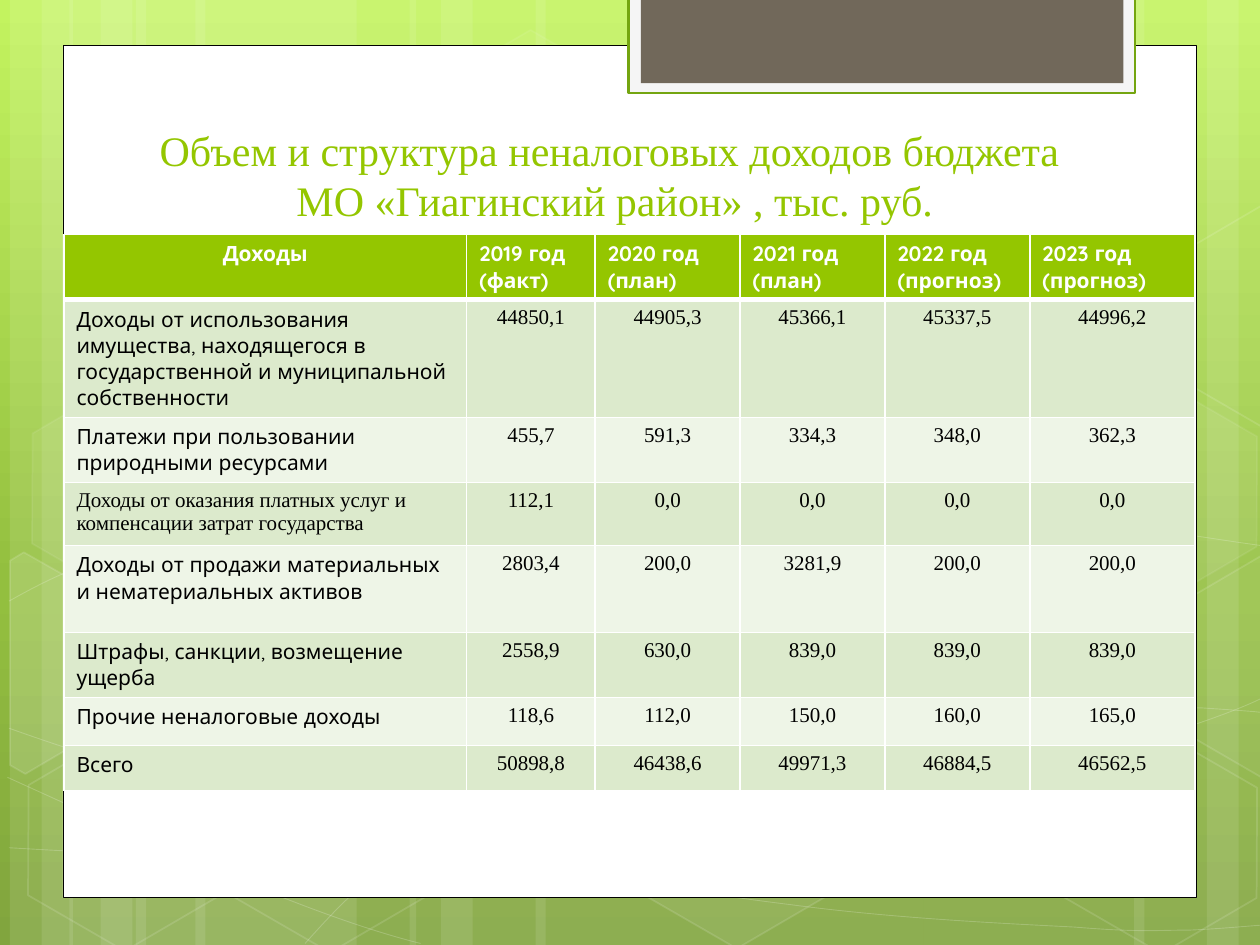
import copy
import math

import pptx
import pptx.dml.color
import pptx.enum.shapes
import pptx.enum.text
import pptx.oxml
import pptx.oxml.ns
import pptx.util

Cm, Pt = pptx.util.Cm, pptx.util.Pt
RGB = pptx.dml.color.RGBColor.from_string
KIND = pptx.enum.shapes.MSO_SHAPE
ALIGN = pptx.enum.text.PP_ALIGN
qn = pptx.oxml.ns.qn
SPACE = pptx.oxml.ns.nsdecls("a")

HUES = {
    "white": "FFFFFF", "black": "000000", "lime": "94C600",
    "sky": "C3F35F", "mid": "93BF3F", "low": "81A53E",
    "frame": "F5F5F5", "edge": "74A510", "tab": "71685A",
    "odd": "DCEACC", "even": "EEF5E7",
}
SERIF, SANS = "Times New Roman", "Quicksand"


def paint(shape, fill=None, line=None, width=1, fade=100, dim=100):
    """Set fill and line; fade and dim are their opacities in percent."""
    shape.shadow.inherit = False
    for hue, part, alpha in ((fill, shape.fill, fade), (line, shape.line.fill, dim)):
        if not hue:
            part.background()
            continue
        part.solid()
        part.fore_color.rgb = RGB(HUES[hue])
        if alpha < 100:
            holder = shape.element.spPr
            if part is not shape.fill:
                holder = holder.find(qn("a:ln"))
            clr = holder.find(qn("a:solidFill")).find(qn("a:srgbClr"))
            clr.append(pptx.oxml.parse_xml(f'<a:alpha {SPACE} val="{alpha * 1000}"/>'))
    if line:
        shape.line.width = Pt(width)


def write(frame, text, font=SANS, size=12, hue="black", bold=False, align=ALIGN.LEFT):
    frame.word_wrap = True
    frame.text = text
    for para in frame.paragraphs:
        para.alignment = align
        for run in para.runs:
            run.font.name = font
            run.font.size = Pt(size)
            run.font.bold = bold
            run.font.color.rgb = RGB(HUES[hue])


deck = pptx.Presentation()
deck.slide_width, deck.slide_height = Cm(25.4), Cm(19.05)
slide = deck.slides.add_slide(deck.slide_layouts[5])
shapes = slide.shapes

# Background gradient
back = slide.background.fill
back.gradient()
back.gradient_angle = 270
last = list(slide.element.iter(qn("a:gs")))[-1]
last.addnext(copy.deepcopy(last))
for stop, (hue, spot) in zip(back.gradient_stops,
                             (("sky", 0), ("mid", 0.62), ("low", 1))):
    stop.color.rgb = RGB(HUES[hue])
    stop.position = spot

# Vertical light bands
for left, width, turn in (
        (2.74, 4.45, 0), (0.2, 1.27, 0), (0.84, 2.11, 0), (3.94, 4.45, 0),
        (1.4, 1.27, 0), (2.03, 2.11, 0), (18.62, 4.45, 180), (24.33, 1.27, 180),
        (22.86, 2.11, 180), (10.8, 7.82, 0), (8.26, 1.27, 0), (8.89, 2.11, 0)):
    band = shapes.add_shape(KIND.RECTANGLE, Cm(left), 0, Cm(width), deck.slide_height)
    band.rotation = turn
    paint(band, "white", fade=10)

# Thin curves: a start point, then three Bezier points for each span;
# flat is the index of a point reached by a straight line
curves = (
    (None, ((0.18, 17.09), (1.55, 17.17), (2.92, 17.25), (4.83, 17.22), (6.73, 17.2),
            (9.09, 17.15), (11.63, 16.89), (14.17, 16.64), (17.78, 16.15),
            (20.12, 15.67), (22.43, 15.19), (24.82, 14.43), (25.58, 14))),
    (None, ((0.18, 12.12), (0.91, 11.71), (1.65, 11.33), (3.07, 10.95), (4.52, 10.57),
            (6.58, 10.01), (8.81, 9.83), (11.07, 9.65), (13.82, 9.63), (16.61, 9.83),
            (19.41, 10.03), (24.05, 10.82), (25.58, 11.02))),
    (None, ((0.15, 15.67), (3.23, 17.07), (6.27, 18.47), (8.48, 19.02))),
    (None, ((0.18, 14.68), (0.97, 14.96), (1.78, 15.24), (3.25, 15.65), (4.72, 16.03),
            (6.93, 16.66), (9.07, 17.09), (11.18, 17.53), (13.84, 17.98),
            (15.95, 18.24), (18.06, 18.52), (20.32, 18.62), (21.67, 18.69),
            (22.99, 18.8), (23.34, 18.75), (24, 18.75), (24.66, 18.72),
            (25.12, 18.67), (25.58, 18.64))),
    (22, ((6.15, 19.02), (6.6, 18.52), (7.06, 18.01), (7.67, 17.55), (8.28, 17.09),
          (9.14, 16.59), (9.86, 16.23), (10.57, 15.88), (11, 15.72), (11.94, 15.47),
          (12.87, 15.22), (14.55, 14.86), (15.44, 14.68), (16.36, 14.5), (16.48, 14.45),
          (17.27, 14.45), (18.06, 14.38), (19.3, 14.3), (20.17, 14.27), (21.06, 14.25),
          (22.5, 14.27), (22.5, 14.27), (24.21, 14.27), (24.66, 14.3), (25.1, 14.33),
          (25.32, 14.35), (25.55, 14.38), (25.48, 14.35), (25.55, 14.38))),
)
for flat, knots in curves:
    dots = [(Cm(x), Cm(y)) for x, y in knots]
    pen = shapes.build_freeform(*dots[0])
    pen.add_line_segments(dots[1:], close=False)
    curve = pen.convert_to_shape()
    span = []
    for at, leg in enumerate(list(curve.element.iter(qn("a:lnTo"))), 1):
        if at == flat:
            continue
        span.append(leg)
        if len(span) == 3:
            bend = pptx.oxml.parse_xml(f"<a:cubicBezTo {SPACE}/>")
            span[0].addprevious(bend)
            for old in span:
                bend.append(old[0])
                old.getparent().remove(old)
            span = []
    paint(curve, None, "white", 0.5, dim=20)

# Whole hexagons: left, top, fill opacity, line opacity
for left, top, fade, dim in ((8.48, 0.91, 4, 8), (12.62, 14.96, 6, 12),
                             (0.28, 15.01, 0, 12), (0.36, 7.92, 7, 8),
                             (4.42, 15.04, 0, 12), (19.13, 11.51, 10, 12),
                             (21.18, 15.06, 0, 12), (21.18, 7.98, 7, 8)):
    hexa = shapes.add_shape(KIND.HEXAGON, Cm(left), Cm(top), Cm(4.45), Cm(3.86))
    hexa.adjustments[0] = 0.285
    hexa.rotation = 30
    paint(hexa, "white" if fade else None, "white", fade=fade, dim=dim)

# Hexagons cut by the slide edge: fill opacity, centre, corners as seen when turned
TURN = math.radians(30)
for fade, (midx, midy), knots in (
        (10, (0.91, 13.59), ((0.2, 11.3), (0.48, 11.13), (2.44, 12.24), (2.41, 14.48),
                             (0.51, 15.6), (0.2, 15.42))),
        (4, (25.02, 13.21), ((23.52, 12.32), (25.43, 11.2), (25.63, 11.33),
                             (25.63, 15.57), (25.45, 15.67), (23.52, 14.55))),
        (0, (25.02, 6.12), ((23.52, 5.26), (25.43, 4.14), (25.65, 4.27),
                            (25.63, 8.51), (25.45, 8.61), (23.52, 7.49)))):
    dots = [(Cm(midx + (x - midx) * math.cos(TURN) + (y - midy) * math.sin(TURN)),
             Cm(midy - (x - midx) * math.sin(TURN) + (y - midy) * math.cos(TURN)))
            for x, y in knots]
    pen = shapes.build_freeform(*dots[0])
    pen.add_line_segments(dots[1:])
    part = pen.convert_to_shape()
    part.rotation = 30
    paint(part, "white" if fade else None, "white", fade=fade, dim=12)

# White sheet and the tab on top of it
for box, fill, line, width in (
        ((1.27, 0.91, 22.86, 17.19), "white", "black", 0.5),
        ((12.67, -0.05, 10.21, 1.93), "frame", "edge", 1.25),
        ((12.92, -0.05, 9.73, 1.73), "tab", None, 0)):
    paint(shapes.add_shape(KIND.RECTANGLE, *map(Cm, box)), fill, line, width)

# Title, brought in front of the sheet
title = shapes.title
shapes.element.append(title.element)
title.left, title.top, title.width, title.height = map(Cm, (1.09, 1.32, 22.61, 3.35))
write(title.text_frame,
      "Объем и структура неналоговых доходов бюджета \vМО «Гиагинский район» , тыс. руб.",
      font=SERIF, size=24, hue="lime", align=ALIGN.CENTER)
title.text_frame.vertical_anchor = pptx.enum.text.MSO_ANCHOR.BOTTOM
title.text_frame.auto_size = pptx.enum.text.MSO_AUTO_SIZE.NONE

# Income table
rows = (
    ("Доходы", "2019 год (факт)", "2020 год (план)", "2021 год\n(план)",
     "2022 год\n(прогноз)", "2023 год\n(прогноз)"),
    ("Доходы от использования имущества, находящегося в государственной и "
     "муниципальной собственности",
     "44850,1", "44905,3", "45366,1", "45337,5", "44996,2"),
    ("Платежи при пользовании природными ресурсами",
     "455,7", "591,3", "334,3", "348,0", "362,3"),
    ("Доходы от оказания платных услуг и компенсации затрат государства",
     "112,1", "0,0", "0,0", "0,0", "0,0"),
    ("Доходы от продажи материальных и нематериальных активов",
     "2803,4", "200,0", "3281,9", "200,0", "200,0"),
    ("Штрафы, санкции, возмещение ущерба",
     "2558,9", "630,0", "839,0", "839,0", "839,0"),
    ("Прочие неналоговые доходы", "118,6", "112,0", "150,0", "160,0", "165,0"),
    ("Всего", "50898,8", "46438,6", "49971,3", "46884,5", "46562,5"),
)
widths = (8.12, 2.59, 2.92, 2.92, 2.92, 3.33)
highs = (1.27, 2.29, 1.27, 1.27, 1.75, 1.27, 0.97, 0.91)
table = shapes.add_table(len(rows), len(widths), Cm(1.29), Cm(4.73),
                         Cm(sum(widths)), Cm(sum(highs))).table
for col, width in zip(table.columns, widths):
    col.width = Cm(width)
for r, (row, high) in enumerate(zip(rows, highs)):
    table.rows[r].height = Cm(high)
    head = r == 0
    for c, text in enumerate(row):
        cell = table.cell(r, c)
        for side in "LRTB":
            thick = 3 if (r, side) in ((0, "B"), (1, "T")) else 1
            cell._tc.get_or_add_tcPr().append(pptx.oxml.parse_xml(
                f'<a:ln{side} {SPACE} w="{Pt(thick)}"><a:solidFill>'
                f'<a:srgbClr val="{HUES["white"]}"/></a:solidFill></a:ln{side}>'))
        cell.fill.solid()
        hue = "lime" if head else "odd" if r % 2 else "even"
        cell.fill.fore_color.rgb = RGB(HUES[hue])
        plain = not head and (c > 0 or r == 3)
        write(cell.text_frame, text, font=SERIF if plain else SANS,
              hue="white" if head else "black", bold=head,
              align=ALIGN.CENTER if head == (c == 0) else ALIGN.LEFT)

deck.save("out.pptx")
